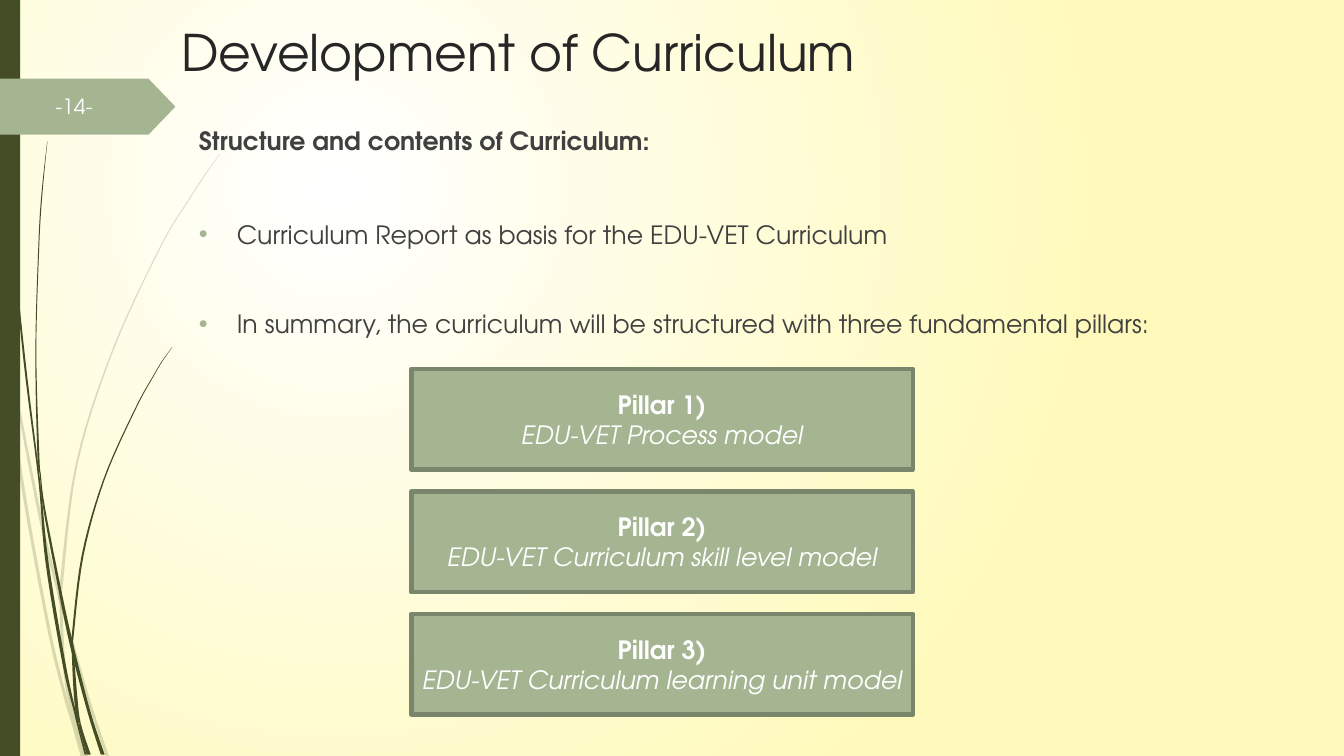
from lxml import etree
from pptx import Presentation
from pptx.dml.color import RGBColor
from pptx.enum import shapes, text
from pptx.oxml.ns import qn
from pptx.util import Pt

FONT = "TeX Gyre Adventor"
SAGE, MOSS, SAGE_EDGE = "A5B592", "444D26", "7A866C"
WHITE, CREAM = "FFFFFF", "FFFABB"
TITLE_INK, BODY_INK = "262626", "404040"

TITLE = "Development of Curriculum"
PAGE = "-14-"
HEADING = "Structure and contents of Curriculum:"
# Point, line spacing, space before
POINTS = [
    ("Curriculum Report as basis for the EDU-VET Curriculum", 1.07, 44),
    ("In summary, the curriculum will be structured with three fundamental pillars:", 1, 42.5),
]
PILLARS = [
    ("Pillar 1)", "EDU-VET Process model"),
    ("Pillar 2)", "EDU-VET Curriculum skill level model"),
    ("Pillar 3)", "EDU-VET Curriculum learning unit model"),
]

# Grass blades: heights of the joints, then knots from tip to root (centre x, y, width)
FAINT_BLADES = [
    ((271, 514),
     [(0, 209, 2), (3.6, 232, 2), (7.6, 271, 2), (14.8, 338, 2.2), (34.2, 446, 2.2),
      (46.4, 497, 2.2), (51.3, 514, 2), (58.7, 540, 2.2)]),
    ((424, 436),
     [(7.2, 248, 0.3), (9.6, 271, 1.5), (29.9, 375, 2.2), (42.2, 424, 2.4),
      (45.1, 436, 2.2), (63, 499, 2.2), (76.7, 540, 2.2)]),
    ((430, 512),
     [(157, 110, 0.3), (145.8, 126, 0.7), (135.4, 142, 0.7), (114.8, 176, 0.8),
      (80.3, 251, 1), (54.7, 332, 1.4), (43.6, 420, 2.2), (43.5, 430, 2),
      (45, 465, 2.2), (48.4, 494, 2.2), (52.6, 512, 1.8), (61.2, 540, 2.9)]),
]
DARK_BLADES = [
    ((343, 520),
     [(2.2, 0, 0.2), (4, 79, 0.7), (9, 167, 0.8), (17.3, 256, 1.4), (28, 343, 1.2),
      (33.5, 401, 2.2), (45.7, 474, 2.2), (53.8, 510, 1.4), (56, 520, 0.8),
      (61.2, 539, 1.4)]),
    ((340, 463),
     [(33.8, 101, 0.2), (29.9, 139, 0.7), (27.7, 176, 0.7), (25.6, 251, 0.7),
      (27.4, 325, 1.4), (28.9, 340, 0.8), (31.7, 364, 1.4), (43.5, 425, 2),
      (51.7, 463, 2.5), (63.7, 509, 2.2), (73.4, 539, 2.8)]),
    ((461, 517),
     [(123.1, 248, 0.2), (115.9, 258, 0.5), (109.4, 269, 0.6), (96.8, 292, 0.8),
      (74.5, 342, 1), (59, 397, 1.4), (51.9, 455, 1.4), (51.8, 461, 1.4),
      (54, 497, 2.4), (56.7, 517, 2.2), (63.4, 539, 2.8)]),
]


def rgb(code):
    return RGBColor.from_string(code)


def paint(shape, fill, edge=None, edge_width=0):
    shape.shadow.inherit = False
    shape.fill.solid()
    shape.fill.fore_color.rgb = rgb(fill)
    if edge:
        shape.line.color.rgb = rgb(edge)
        shape.line.width = Pt(edge_width)
    else:
        shape.line.fill.background()


def write(paragraph, words, size, ink, bold=False, italic=False,
          align=text.PP_ALIGN.LEFT):
    paragraph.text = words
    paragraph.alignment = align
    font = paragraph.font
    font.name, font.size, font.bold, font.italic = FONT, Pt(size), bold, italic
    font.color.rgb = rgb(ink)


def add_bullet(paragraph, indent):
    props = paragraph._p.get_or_add_pPr()
    props.set("marL", str(Pt(indent)))
    props.set("indent", str(-Pt(indent)))
    color = etree.SubElement(props, qn("a:buClr"))
    etree.SubElement(color, qn("a:srgbClr"), val=SAGE)
    etree.SubElement(props, qn("a:buFont"), typeface="Arial")
    etree.SubElement(props, qn("a:buChar"), char="•")


def smooth_curve(knots, steps=6):
    """Catmull-Rom curve through the knots."""
    padded = [knots[0], *knots, knots[-1]]
    curve = []
    for a, b, c, d in zip(padded, padded[1:], padded[2:], padded[3:]):
        for step in range(steps):
            t = step / steps
            curve.append([
                (2 * q + (r - p) * t + (2 * p - 5 * q + 4 * r - s) * t ** 2
                 + (3 * q - p - 3 * r + s) * t ** 3) / 2
                for p, q, r, s in zip(a, b, c, d)])
    return curve + [knots[-1]]


def add_blade(slide, joints, knots, opacity):
    curve = smooth_curve(knots)
    ends = [knots[0][1], *joints, knots[-1][1]]
    for tip, root in zip(ends, ends[1:]):
        section = [point for point in curve if tip <= point[1] <= root]
        outline = [(x - w / 2, y) for x, y, w in section]
        outline += [(x + w / 2, y) for x, y, w in reversed(section)]
        outline = [(Pt(x), Pt(y)) for x, y in outline]
        builder = slide.shapes.build_freeform(*outline[0])
        builder.add_line_segments(outline[1:], close=True)
        blade = builder.convert_to_shape()
        paint(blade, MOSS)
        if opacity < 100:
            color = blade._element.spPr.find(".//" + qn("a:srgbClr"))
            etree.SubElement(color, qn("a:alpha"), val=str(opacity * 1000))


def add_background(slide):
    fill = slide.background.fill
    fill.gradient()
    for stop, color, position in zip(fill.gradient_stops, (WHITE, CREAM), (0, 1)):
        stop.color.rgb = rgb(color)
        stop.position = position
    linear = slide._element.find(".//" + qn("a:lin"))
    radial = etree.Element(qn("a:path"), {"path": "circle"})
    etree.SubElement(radial, qn("a:fillToRect"),
                     l="50000", t="50000", r="100000", b="100000")
    linear.getparent().replace(linear, radial)


def main():
    deck = Presentation()
    deck.slide_width, deck.slide_height = Pt(960), Pt(540)
    slide = deck.slides.add_slide(deck.slide_layouts[5])
    add_background(slide)

    # Grass and side bar
    for blades, opacity in ((FAINT_BLADES, 20), (DARK_BLADES, 100)):
        for joints, knots in blades:
            add_blade(slide, joints, knots, opacity)
    side_bar = slide.shapes.add_shape(
        shapes.MSO_SHAPE.RECTANGLE, 0, 0, Pt(14.4), Pt(540))
    paint(side_bar, MOSS)

    # Page tag
    tag = slide.shapes.add_shape(
        shapes.MSO_SHAPE.PENTAGON, 0, Pt(56.2), Pt(125.3), Pt(40))
    tag.adjustments[0] = 0.48
    paint(tag, SAGE)
    page = slide.shapes.add_textbox(Pt(32.4), Pt(63.4), Pt(59), Pt(25.2)).text_frame
    page.word_wrap = True
    page.vertical_anchor = text.MSO_ANCHOR.MIDDLE
    write(page.paragraphs[0], PAGE, 15, WHITE)

    # Title
    title = slide.shapes.title
    title.left, title.top, title.width, title.height = Pt(122.4), Pt(11.5), Pt(637), Pt(101)
    title.text_frame.vertical_anchor = text.MSO_ANCHOR.TOP
    write(title.text_frame.paragraphs[0], TITLE, 36, TITLE_INK)

    # Heading and points
    body = slide.shapes.add_textbox(Pt(135), Pt(84.2), Pt(702), Pt(451)).text_frame
    body.word_wrap = True
    body.paragraphs[0].line_spacing = 1.07
    write(body.paragraphs[0], HEADING, 18, BODY_INK, bold=True)
    for point, spacing, gap in POINTS:
        paragraph = body.add_paragraph()
        paragraph.line_spacing = float(spacing)
        paragraph.space_before = Pt(gap)
        add_bullet(paragraph, 27)
        write(paragraph, point, 18, BODY_INK)

    # Pillars
    for row, (name, model) in enumerate(PILLARS):
        pillar = slide.shapes.add_shape(
            shapes.MSO_SHAPE.RECTANGLE, Pt(293.8), Pt(263.5 + 87.5 * row), Pt(358.2), Pt(72))
        paint(pillar, SAGE, SAGE_EDGE, 3.15)
        frame = pillar.text_frame
        frame.word_wrap = True
        frame.vertical_anchor = text.MSO_ANCHOR.MIDDLE
        centre = text.PP_ALIGN.CENTER
        write(frame.paragraphs[0], name, 18, WHITE, bold=True, align=centre)
        write(frame.add_paragraph(), model, 18, WHITE, italic=True, align=centre)

    deck.save("out.pptx")


if __name__ == "__main__":
    main()
